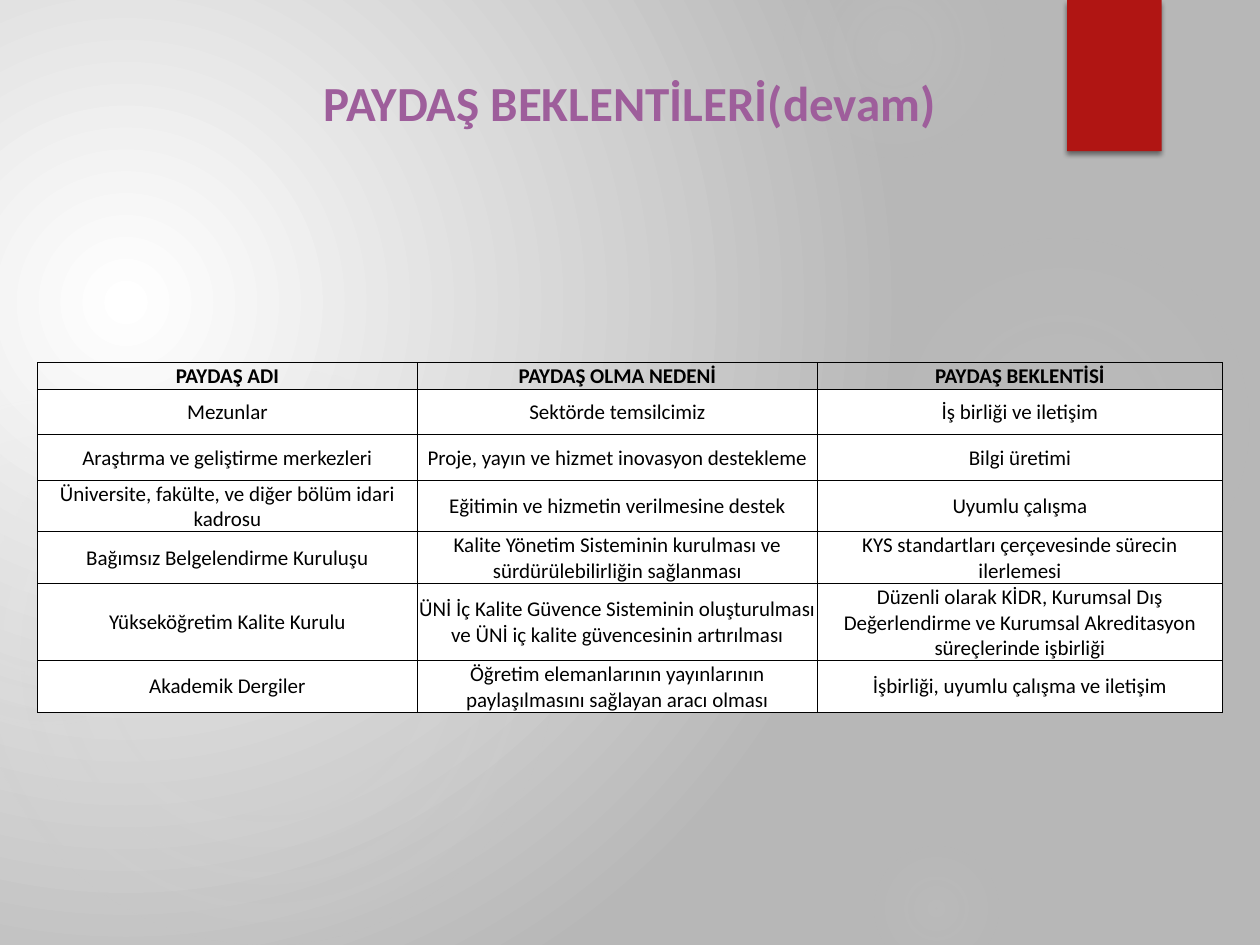
from lxml.etree import SubElement
from pptx import Presentation
from pptx.dml.color import RGBColor
from pptx.enum.shapes import MSO_SHAPE
from pptx.enum.text import MSO_ANCHOR, MSO_AUTO_SIZE, PP_ALIGN
from pptx.oxml.ns import qn
from pptx.util import Inches, Pt

COLORS = {"white": "FFFFFF", "gray": "B7B7B7", "glow": "D9D9D9",
          "red": "B01513", "purple": "9E5E9B", "black": "000000"}

# Left, top, size in grid cells, then (position, opacity) stops in percent
GLOWS = [
    (68.9, 18.3, 30.8, [(0, 7), (36, 6), (69, 0)]),
    (62.2, -5, 17.5, [(0, 14), (36, 7), (73, 0)]),
    (68.9, 66.7, 10.8, [(0, 9), (36, 5), (66, 0)]),
    (-1.7, 29.2, 45.8, [(0, 11), (36, 10), (75, 0)]),
    (-9.2, 31.7, 25.8, [(0, 8), (36, 8), (72, 0)]),
]
COLUMN_WIDTHS = [30.1, 31.8, 32.1]
ROW_HEIGHTS = [2.1, 3.6, 3.6, 4.1, 4.1, 6.1, 4.1]
STAKEHOLDERS = [
    ("PAYDAŞ ADI", "PAYDAŞ OLMA NEDENİ", "PAYDAŞ BEKLENTİSİ"),
    ("Mezunlar", "Sektörde temsilcimiz", "İş birliği ve iletişim"),
    ("Araştırma ve geliştirme merkezleri",
     "Proje, yayın ve hizmet inovasyon destekleme", "Bilgi üretimi"),
    ("Üniversite, fakülte, ve diğer bölüm idari kadrosu",
     "Eğitimin ve hizmetin verilmesine destek", "Uyumlu çalışma"),
    ("Bağımsız Belgelendirme Kuruluşu",
     "Kalite Yönetim Sisteminin kurulması ve sürdürülebilirliğin sağlanması",
     "KYS standartları çerçevesinde sürecin ilerlemesi"),
    ("Yükseköğretim Kalite Kurulu",
     "ÜNİ İç Kalite Güvence Sisteminin oluşturulması ve ÜNİ iç kalite "
     "güvencesinin artırılması",
     "Düzenli olarak KİDR, Kurumsal Dış Değerlendirme ve Kurumsal "
     "Akreditasyon süreçlerinde işbirliği"),
    ("Akademik Dergiler",
     "Öğretim elemanlarının yayınlarının paylaşılmasını sağlayan aracı olması",
     "İşbirliği, uyumlu çalışma ve iletişim"),
]


def rgb(name):
    return RGBColor.from_string(COLORS[name])


def add_color(parent, name, opacity=100):
    color = SubElement(parent, qn("a:srgbClr"), val=COLORS[name])
    if opacity < 100:
        SubElement(color, qn("a:alpha"), val=str(opacity * 1000))


def set_radial(fill, element, stops, focus):
    """Stops are (position, color, opacity); focus is left, top, right, bottom."""
    fill.gradient()
    gradient = next(element.iter(qn("a:gradFill")))
    for child in list(gradient):
        gradient.remove(child)
    stop_list = SubElement(gradient, qn("a:gsLst"))
    for position, color, opacity in stops:
        stop = SubElement(stop_list, qn("a:gs"), pos=str(position * 1000))
        add_color(stop, color, opacity)
    circle = SubElement(gradient, qn("a:path"))
    circle.set("path", "circle")
    sides = {side: str(share * 1000) for side, share in zip("ltrb", focus)}
    SubElement(circle, qn("a:fillToRect"), **sides)


class SlideBuilder:
    """Places elements on a grid of 100 columns by 75 rows."""

    font = "Calibri"
    columns, rows = 100, 75

    def __init__(self, deck):
        self.deck = deck
        self.page = deck.slides.add_slide(deck.slide_layouts[5])

    def place(self, left, top, width, height):
        cell_width = self.deck.slide_width / self.columns
        cell_height = self.deck.slide_height / self.rows
        return [round(left * cell_width), round(top * cell_height),
                round(width * cell_width), round(height * cell_height)]

    def background(self, stops, focus):
        set_radial(self.page.background.fill, self.page.element, stops, focus)

    def shape(self, kind, *area):
        shape = self.page.shapes.add_shape(kind, *self.place(*area))
        shape.shadow.inherit = False
        shape.line.fill.background()
        return shape

    def glow(self, left, top, size, stops):
        oval = self.shape(MSO_SHAPE.OVAL, left, top, size, size)
        faded = [(position, "glow", opacity) for position, opacity in stops]
        set_radial(oval.fill, oval.element, faded, (50, 50, 50, 50))

    def ribbon(self, *area):
        band = self.shape(MSO_SHAPE.RECTANGLE, *area)
        band.fill.solid()
        band.fill.fore_color.rgb = rgb("red")
        effects = next(band.element.iter(qn("a:effectLst")))
        shadow = SubElement(effects, qn("a:outerShdw"), blurRad=str(Pt(3)),
                            dist=str(Pt(2)), dir="5400000", rotWithShape="0")
        add_color(shadow, "black", 45)

    def add_text(self, frame, text, size, color, bold):
        para = frame.paragraphs[0]
        para.alignment = PP_ALIGN.CENTER
        span = para.add_run()
        span.text = text
        span.font.color.rgb = rgb(color)
        style = {"name": self.font, "size": Pt(size), "bold": bold}
        for key, value in style.items():
            setattr(span.font, key, value)

    def title(self, text, *area):
        box = self.page.shapes.title
        box.left, box.top, box.width, box.height = self.place(*area)
        frame = box.text_frame
        layout = {"word_wrap": True, "vertical_anchor": MSO_ANCHOR.MIDDLE,
                  "auto_size": MSO_AUTO_SIZE.SHAPE_TO_FIT_TEXT}
        for key, value in layout.items():
            setattr(frame, key, value)
        self.add_text(frame, text, 28, "purple", True)
        box.element.getparent().append(box.element)  # in front of the glows

    def cell(self, cell, text, header):
        inset = Inches(0 if header else 0.01)
        layout = {"vertical_anchor": MSO_ANCHOR.MIDDLE, "margin_left": inset,
                  "margin_top": inset, "margin_right": inset, "margin_bottom": 0}
        for key, value in layout.items():
            setattr(cell, key, value)
        properties = cell._tc.get_or_add_tcPr()
        for side in "LRTB":
            border = SubElement(properties, qn(f"a:ln{side}"), w=str(Pt(0.5)))
            add_color(SubElement(border, qn("a:solidFill")), "black")
        if header:
            cell.fill.background()
        else:
            cell.fill.solid()
            cell.fill.fore_color.rgb = rgb("white")
        self.add_text(cell.text_frame, text, 12, "black", header)

    def table(self, left, top, widths, heights, records):
        area = self.place(left, top, sum(widths), sum(heights))
        table = self.page.shapes.add_table(len(heights), len(widths), *area).table
        table.first_row = table.horz_banding = False
        for column, width in zip(table.columns, widths):
            column.width = self.place(0, 0, width, 0)[2]
        for row, height in zip(table.rows, heights):
            row.height = self.place(0, 0, 0, height)[3]
        for row_index, record in enumerate(records):
            for column_index, text in enumerate(record):
                self.cell(table.cell(row_index, column_index), text, row_index == 0)


def main():
    deck = Presentation()
    deck.slide_width, deck.slide_height = Inches(10), Inches(7.5)
    builder = SlideBuilder(deck)

    # Backdrop with soft glows and a ribbon
    builder.background([(0, "white", 100), (100, "gray", 100)], (45, 65, 125, 100))
    for glow in GLOWS:
        builder.glow(*glow)
    builder.ribbon(84.7, 0, 7.5, 12)

    # Title and stakeholder table
    builder.title("PAYDAŞ BEKLENTİLERİ(devam)", 22.2, 5.2, 55.5, 5.7)
    builder.table(3, 28.8, COLUMN_WIDTHS, ROW_HEIGHTS, STAKEHOLDERS)

    deck.save("out.pptx")


if __name__ == "__main__":
    main()
